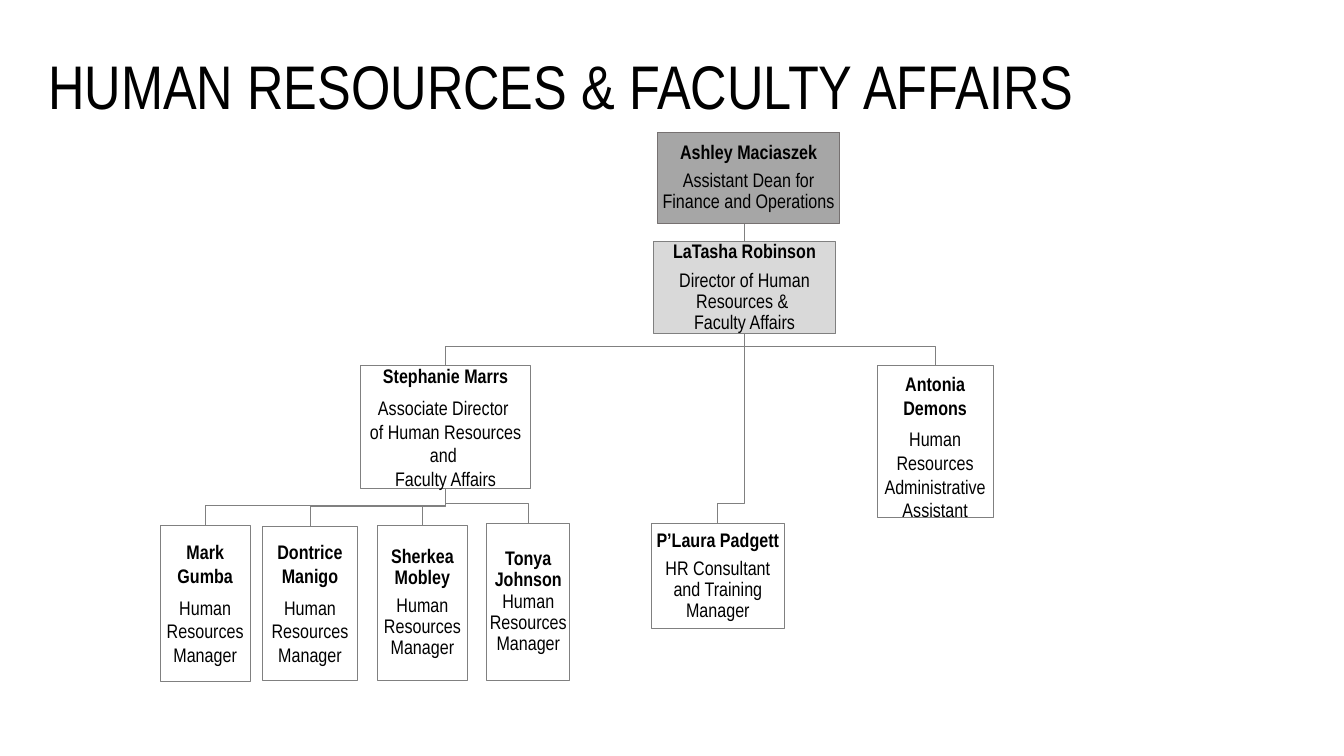
import dataclasses

import lxml.etree
import pptx
import pptx.dml.color
import pptx.enum.shapes
import pptx.enum.text
import pptx.oxml.ns
import pptx.util

Inches = pptx.util.Inches
Pt = pptx.util.Pt


@dataclasses.dataclass(frozen=True)
class Theme:
    font: str = "Arial Narrow"
    title_size: int = 44
    body_size: int = 14
    line_width: float = 0.75
    text: str = "000000"
    line: str = "808080"
    dean_line: str = "767171"
    dean: str = "A6A6A6"
    director: str = "D9D9D9"
    staff: str = "FFFFFF"


THEME = Theme()
TIGHT = (0.9, 5)  # line spacing, points between name and role
LOOSE = (1.0, 6)
JOINED = (0.9, 0)
TURN = 0.19  # height of an elbow above the lower box


@dataclasses.dataclass(frozen=True)
class Person:
    name: str
    role: str
    left: float
    top: float
    width: float
    height: float
    spacing: tuple = LOOSE
    fill: str = THEME.staff
    line: str = THEME.line
    top_inset: float = 0  # above 0: text hangs from the top

    @property
    def center(self):
        return self.left + self.width / 2

    @property
    def bottom(self):
        return self.top + self.height


MANAGER = "Human Resources Manager"
DEAN = Person("Ashley Maciaszek", "Assistant Dean for Finance and Operations",
              6.52, 1.31, 1.81, 0.91, TIGHT, THEME.dean, THEME.dean_line)
DIRECTOR = Person("LaTasha Robinson", "Director of Human Resources & \vFaculty Affairs",
                  6.48, 2.4, 1.81, 0.91, TIGHT, THEME.director)
ASSOCIATE = Person("Stephanie Marrs",
                   "Associate Director \vof Human Resources and \vFaculty Affairs",
                   3.58, 3.63, 1.68, 1.22)
ASSISTANT = Person("Antonia Demons", "Human Resources Administrative Assistant",
                   8.7, 3.63, 1.15, 1.5, top_inset=0.06)
CONSULTANT = Person("P’Laura Padgett", "HR Consultant and Training Manager",
                    6.46, 5.19, 1.32, 1.05, TIGHT)
MANAGERS = [
    Person("Mark Gumba", MANAGER, 1.59, 5.21, 0.89, 1.55),
    Person("Dontrice Manigo", MANAGER, 2.6, 5.22, 0.95, 1.53),
    Person("Sherkea Mobley", MANAGER, 3.74, 5.21, 0.9, 1.54, TIGHT),
    Person("Tonya Johnson", MANAGER, 4.83, 5.19, 0.82, 1.56, JOINED),
]
REPORTS = [
    (DEAN, [DIRECTOR]),
    (DIRECTOR, [ASSOCIATE, CONSULTANT, ASSISTANT]),
    (ASSOCIATE, MANAGERS),
]


def rgb(value):
    return pptx.dml.color.RGBColor.from_string(value)


def format_spans(para, size, bold=False):
    for span in para.runs:
        span.font.name = THEME.font
        span.font.size = Pt(size)
        span.font.bold = bold
        span.font.color.rgb = rgb(THEME.text)
    # Line breaks carry the text size too
    for line_break in para._p.findall(pptx.oxml.ns.qn("a:br")):
        lxml.etree.SubElement(line_break, pptx.oxml.ns.qn("a:rPr"), sz=str(size * 100))


def style_line(shape, color):
    shape.shadow.inherit = False
    shape.line.color.rgb = rgb(color)
    shape.line.width = Pt(THEME.line_width)


def add_title(page, text):
    title = page.shapes.title
    title.left, title.top = Inches(0.38), Inches(0.16)
    title.width, title.height = Inches(11.5), Inches(1.45)
    frame = title.text_frame
    frame.text = text
    frame.auto_size = pptx.enum.text.MSO_AUTO_SIZE.NONE
    frame.vertical_anchor = pptx.enum.text.MSO_ANCHOR.MIDDLE
    para = frame.paragraphs[0]
    para.alignment = pptx.enum.text.PP_ALIGN.LEFT
    para.line_spacing = 0.9
    format_spans(para, THEME.title_size)


def add_elbow(page, upper, lower):
    turn = max(upper.bottom, lower.top - TURN)
    points = [(upper.center, turn), (lower.center, turn), (lower.center, lower.top)]
    builder = page.shapes.build_freeform(Inches(upper.center), Inches(upper.bottom))
    builder.add_line_segments([(Inches(x), Inches(y)) for x, y in points], close=False)
    elbow = builder.convert_to_shape()
    elbow.fill.background()
    style_line(elbow, THEME.line)


def add_person(page, person):
    box = page.shapes.add_shape(
        pptx.enum.shapes.MSO_SHAPE.RECTANGLE, Inches(person.left), Inches(person.top),
        Inches(person.width), Inches(person.height))
    box.fill.solid()
    box.fill.fore_color.rgb = rgb(person.fill)
    style_line(box, person.line)

    frame = box.text_frame
    frame.word_wrap = True
    frame.margin_left = frame.margin_right = frame.margin_bottom = Inches(0.01)
    frame.margin_top = Inches(person.top_inset or 0.01)
    anchors = pptx.enum.text.MSO_ANCHOR
    frame.vertical_anchor = anchors.TOP if person.top_inset else anchors.MIDDLE

    line_spacing, gap = person.spacing
    role = frame.add_paragraph()
    name = frame.paragraphs[0]
    for para, text in ((name, person.name), (role, person.role)):
        para.text = text
        para.alignment = pptx.enum.text.PP_ALIGN.CENTER
        para.line_spacing = line_spacing
        para.space_after = Pt(gap)
        format_spans(para, THEME.body_size, bold=para is name)


def main():
    deck = pptx.Presentation()
    deck.slide_width, deck.slide_height = Inches(13.33), Inches(7.5)
    page = deck.slides.add_slide(deck.slide_layouts.get_by_name("Title Only"))
    add_title(page, "HUMAN RESOURCES & FACULTY AFFAIRS")

    # Reporting lines lie behind the boxes
    for upper, team in REPORTS:
        for lower in team:
            add_elbow(page, upper, lower)

    # Boxes
    for person in [DEAN, DIRECTOR, ASSOCIATE, *MANAGERS, ASSISTANT, CONSULTANT]:
        add_person(page, person)

    deck.save("out.pptx")


if __name__ == "__main__":
    main()
